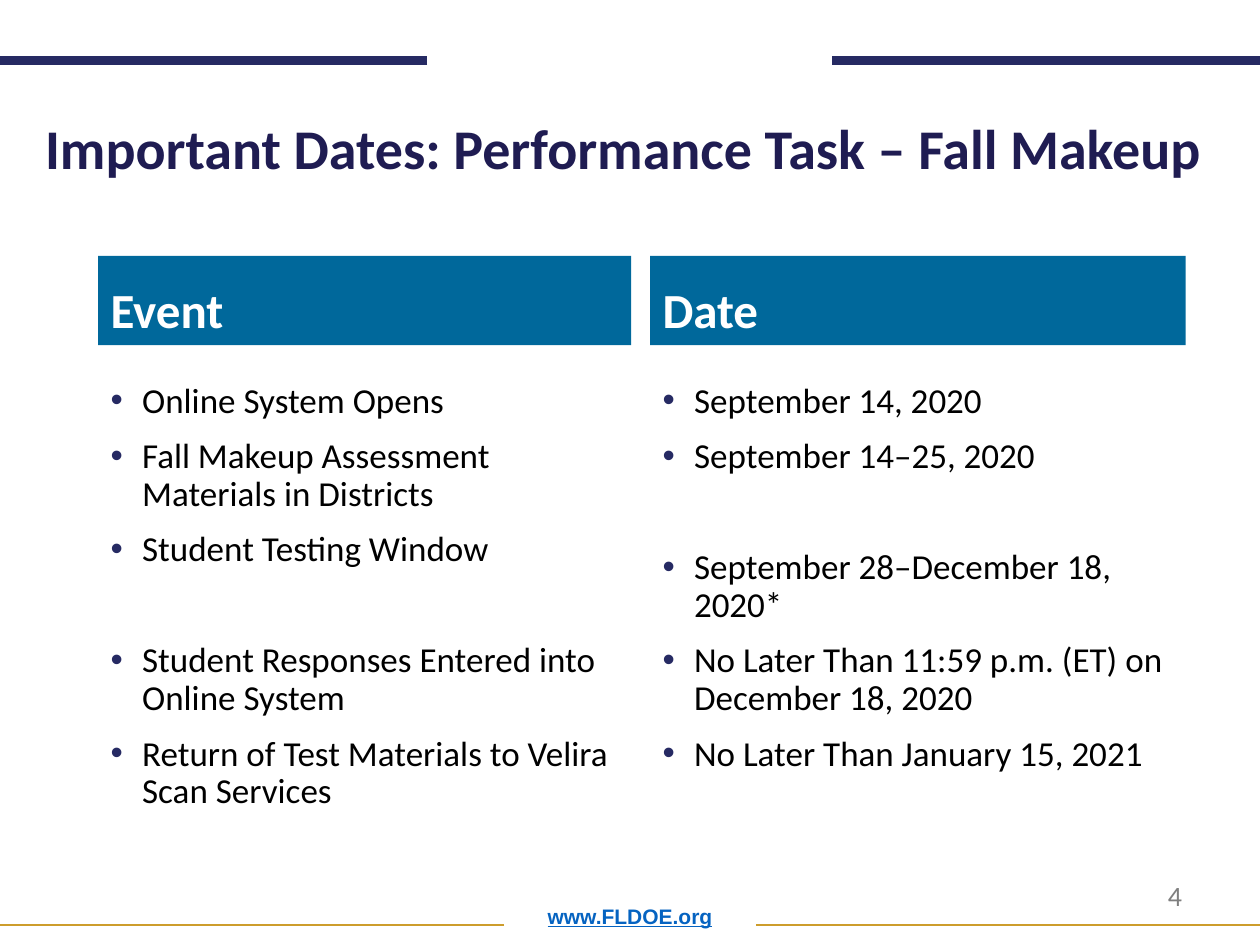
from lxml.etree import SubElement
from pptx import Presentation
from pptx.dml.color import RGBColor
from pptx.enum.shapes import MSO_CONNECTOR as Connector, MSO_SHAPE as Shape
from pptx.enum.text import MSO_ANCHOR as Anchor, PP_ALIGN as Align
from pptx.oxml.ns import qn
from pptx.util import Inches, Pt

NAVY, GOLD, BLUE = "262A63", "CD9D2C", "00689B"
ITEM_GAP = 10
SKIPPED_LINE_GAP = 42

EVENTS = [
    ("Online System Opens", 0),
    ("Fall Makeup Assessment Materials in Districts", ITEM_GAP),
    ("Student Testing Window", ITEM_GAP),
    ("Student Responses Entered into Online System", SKIPPED_LINE_GAP),
    ("Return of Test Materials to Velira Scan Services", ITEM_GAP),
]
DATES = [
    ("September 14, 2020", 0),
    ("September 14–25, 2020", ITEM_GAP),
    ("September 28–December 18, 2020*", SKIPPED_LINE_GAP),
    ("No Later Than 11:59 p.m. (ET) on December 18, 2020", ITEM_GAP),
    ("No Later Than January 15, 2021", ITEM_GAP),
]


def color(value):
    """Return the colour for a hex string."""
    return RGBColor.from_string(value)


def add_run(paragraph, text, size, hex_color, bold=False, font="Calibri"):
    """Append one formatted run to a paragraph."""
    run = paragraph.add_run()
    run.text = text
    run.font.name = font
    run.font.size = Pt(size)
    run.font.bold = bold
    run.font.color.rgb = color(hex_color)
    return run


def add_text_box(slide, left, top, width, height, anchor=Anchor.TOP):
    """Add a wrapping text box and return its text frame."""
    box = slide.shapes.add_textbox(Inches(left), Inches(top), Inches(width), Inches(height))
    frame = box.text_frame
    frame.word_wrap = True
    frame.vertical_anchor = anchor
    return frame


def add_rule(slide, start, end, y, hex_color, weight):
    """Draw a horizontal rule without shadow."""
    rule = slide.shapes.add_connector(
        Connector.STRAIGHT, Inches(start), Inches(y), Inches(end), Inches(y))
    rule.line.color.rgb = color(hex_color)
    rule.line.width = Pt(weight)
    SubElement(rule._element.spPr, qn("a:effectLst"))


def add_split_rule(slide, gap_start, gap_end, y, hex_color, weight):
    """Draw a rule across the slide with a gap in the middle."""
    add_rule(slide, gap_start, 0, y, hex_color, weight)
    add_rule(slide, 10, gap_end, y, hex_color, weight)


def add_bullet(paragraph):
    """Give a paragraph a hanging navy bullet."""
    properties = paragraph._p.get_or_add_pPr()
    properties.set("marL", str(Inches(0.25)))
    properties.set("indent", str(-Inches(0.25)))
    bullet_color = SubElement(properties, qn("a:buClr"))
    SubElement(bullet_color, qn("a:srgbClr"), val=NAVY)
    SubElement(properties, qn("a:buFont"), typeface="Arial")
    SubElement(properties, qn("a:buChar"), char="•")


def add_title(slide, left, top, width, height):
    """Place the slide title."""
    paragraph = add_text_box(slide, left, top, width, height).paragraphs[0]
    paragraph.line_spacing = 0.9
    add_run(paragraph, "Important Dates: Performance Task – Fall Makeup", 32, "1F1C52", True)


def add_column(slide, left, top, width, heading, items):
    """Place a heading band with its bulleted list below."""
    band = slide.shapes.add_shape(
        Shape.RECTANGLE, Inches(left), Inches(top), Inches(width), Inches(0.71))
    band.shadow.inherit = False
    band.fill.solid()
    band.fill.fore_color.rgb = color(BLUE)
    band.line.fill.background()
    band.text_frame.word_wrap = True
    band.text_frame.vertical_anchor = Anchor.BOTTOM
    paragraph = band.text_frame.paragraphs[0]
    paragraph.alignment = Align.LEFT
    paragraph.line_spacing = 0.9
    add_run(paragraph, heading, 28, "FFFFFF", True)

    frame = add_text_box(slide, left, top + 0.96, width, 4.78)
    for index, (text, gap) in enumerate(items):
        paragraph = frame.add_paragraph() if index else frame.paragraphs[0]
        add_bullet(paragraph)
        paragraph.line_spacing = 0.9
        paragraph.space_before = Pt(gap)
        add_run(paragraph, text, 20, "000000")


def add_footer(slide, left, top, width, height):
    """Place the web address and the slide number."""
    paragraph = add_text_box(slide, left, top, width, height, Anchor.BOTTOM).paragraphs[0]
    paragraph.alignment = Align.CENTER
    paragraph.line_spacing = 0.9
    address = add_run(paragraph, "www.FLDOE.org", 12, "0563C1", True, "Arial")
    address.font.underline = True
    number = add_text_box(slide, left + width - 0.14, top - 0.08, 0.73, 0.37)
    add_run(number.paragraphs[0], "4", 16, "7F7F7F")


def main():
    """Build and save the slide."""
    presentation = Presentation()
    presentation.slide_width = Inches(10)
    presentation.slide_height = Inches(7.5)
    slide = presentation.slides.add_slide(presentation.slide_layouts[6])
    add_split_rule(slide, 3.39, 6.6, 0.48, NAVY, 5)
    add_split_rule(slide, 4, 6, 7.34, GOLD, 1)
    add_footer(slide, 0.69, 7, 8.62, 0.42)
    add_column(slide, 0.78, 2.03, 4.23, "Event", EVENTS)
    add_column(slide, 5.16, 2.03, 4.25, "Date", DATES)
    add_title(slide, 0.26, 0.91, 9.5, 0.87)
    presentation.save("out.pptx")


if __name__ == "__main__":
    main()
